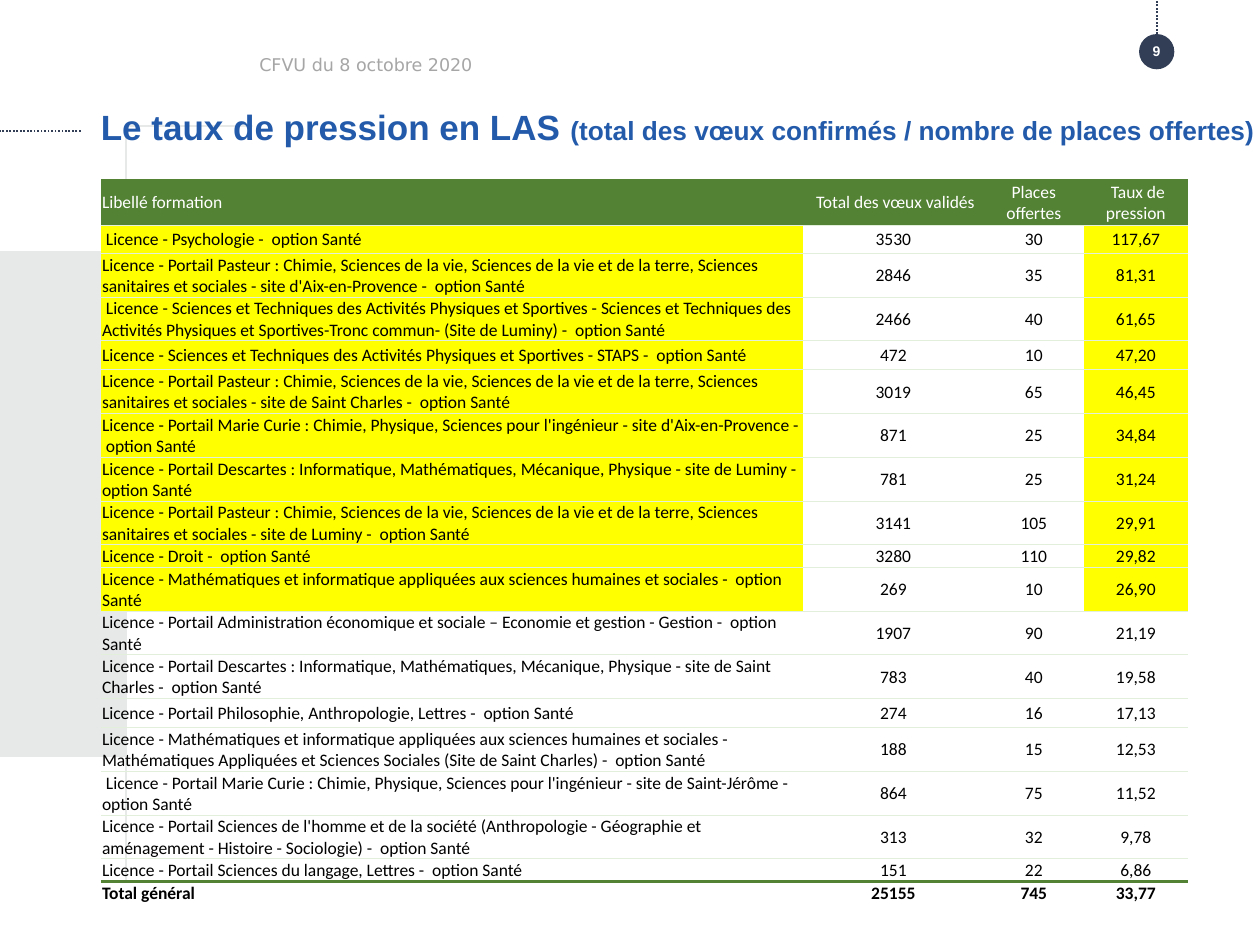
from lxml import etree
from pptx import Presentation
from pptx.dml.color import RGBColor
from pptx.enum.dml import MSO_LINE
from pptx.enum.shapes import MSO_CONNECTOR, MSO_SHAPE
from pptx.enum.text import MSO_ANCHOR, MSO_AUTO_SIZE, PP_ALIGN
from pptx.oxml.ns import qn
from pptx.util import Inches, Pt

COLORS = {
    "crescent": "E7E8E8", "navy": "313E56", "title": "235BAA", "muted": "A6A6A6",
    "green": "548235", "rule": "E2EFDA", "highlight": "FFFF00",
    "white": "FFFFFF", "black": "000000",
}
NO_STYLE_NO_GRID = "{2D5ABB26-0587-4C30-8999-92F81FD0307C}"

# Crescent outlines, in inches on the slide
CRESCENT_UPPER = [
    (1.65, 0.9), (1.64, 0.86), (1.55, 0.82), (1.47, 0.81), (1.36, 0.86), (1.27, 0.95),
    (1.2, 1.04), (1.12, 1.15), (1.04, 1.26), (0.95, 1.41), (0.82, 1.62), (0.69, 1.88),
    (0.57, 2.14), (0.46, 2.4), (0.39, 2.61), (0.32, 2.88), (0.27, 3.1), (0.22, 3.37),
    (0.2, 3.6), (0.18, 3.9), (0.18, 4.2), (0.19, 4.45), (0.22, 4.74), (0.26, 4.96),
    (0.32, 5.23), (0.39, 5.49), (0.48, 5.74), (0.57, 5.95), (0.69, 6.2), (0.83, 6.48),
    (0.83, 3.93), (0.85, 3.63), (0.87, 3.34), (0.91, 3.11), (0.95, 2.89), (1.03, 2.52),
    (1.11, 2.25), (1.19, 2.01), (1.28, 1.75), (1.37, 1.53), (1.46, 1.35), (1.55, 1.13),
    (1.61, 1), (1.64, 0.93),
]
CRESCENT_LOWER = [
    (1.65, 7.19), (1.61, 7.08), (1.55, 6.96), (1.47, 6.79), (1.4, 6.62), (1.33, 6.44),
    (1.26, 6.26), (1.19, 6.06), (1.1, 5.8), (1.02, 5.51), (0.95, 5.2), (0.9, 4.92),
    (0.87, 4.7), (0.84, 4.41), (0.83, 4.17), (0.83, 6.48), (0.9, 6.6), (0.99, 6.74),
    (1.07, 6.87), (1.14, 6.97), (1.22, 7.08), (1.29, 7.16), (1.36, 7.23), (1.43, 7.27),
    (1.51, 7.28), (1.55, 7.28), (1.62, 7.25), (1.65, 7.21),
]

HEADERS = ["Libellé formation", " Total des vœux validés", "Places offertes", " Taux de pression"]
OPTION = " -  option Santé"
PASTEUR = ("Licence - Portail Pasteur : Chimie, Sciences de la vie, Sciences de la vie "
           "et de la terre, Sciences sanitaires et sociales - site ")
STAPS = "Licence - Sciences et Techniques des Activités Physiques et Sportives - "
CURIE = "Licence - Portail Marie Curie : Chimie, Physique, Sciences pour l'ingénieur - site "
DESCARTES = "Licence - Portail Descartes : Informatique, Mathématiques, Mécanique, Physique - site "
MATHS = "Licence - Mathématiques et informatique appliquées aux sciences humaines et sociales"

# Label, confirmed wishes, places, pressure rate, row height
PROGRAMMES = [
    (" Licence - Psychologie", "3530", "30", "117,67", 0.22),
    (PASTEUR + "d'Aix-en-Provence", "2846", "35", "81,31", 0.34),
    (" " + STAPS + "Sciences et Techniques des Activités Physiques et Sportives"
     "-Tronc commun- (Site de Luminy)", "2466", "40", "61,65", 0.34),
    (STAPS + "STAPS", "472", "10", "47,20", 0.23),
    (PASTEUR + "de Saint Charles", "3019", "65", "46,45", 0.34),
    (CURIE + "d'Aix-en-Provence", "871", "25", "34,84", 0.34),
    (DESCARTES + "de Luminy", "781", "25", "31,24", 0.34),
    (PASTEUR + "de Luminy", "3141", "105", "29,91", 0.34),
    ("Licence - Droit", "3280", "110", "29,82", 0.17),
    (MATHS, "269", "10", "26,90", 0.34),
    ("Licence - Portail Administration économique et sociale – Economie et gestion - Gestion",
     "1907", "90", "21,19", 0.34),
    (DESCARTES + "de Saint Charles", "783", "40", "19,58", 0.34),
    ("Licence - Portail Philosophie, Anthropologie, Lettres", "274", "16", "17,13", 0.23),
    (MATHS + " - Mathématiques Appliquées et Sciences Sociales (Site de Saint Charles)",
     "188", "15", "12,53", 0.34),
    (" " + CURIE + "de Saint-Jérôme", "864", "75", "11,52", 0.34),
    ("Licence - Portail Sciences de l'homme et de la société (Anthropologie - Géographie et "
     "aménagement - Histoire - Sociologie)", "313", "32", "9,78", 0.34),
    ("Licence - Portail Sciences du langage, Lettres", "151", "22", "6,86", 0.17),
]
TOTAL = ("Total général", "25155", "745", "33,77")
HIGHLIGHTED_ROWS = 10


def rgb(name):
    return RGBColor.from_string(COLORS[name])


def add_run(paragraph, text, size, font, color, bold=False):
    run = paragraph.add_run()
    run.text = text
    run.font.size, run.font.name, run.font.bold = Pt(size), font, bold
    run.font.color.rgb = rgb(color)


def add_label(slide, box, text, size, font, color, bold=False, align=PP_ALIGN.LEFT):
    frame = slide.shapes.add_textbox(*map(Inches, box)).text_frame
    frame.word_wrap = True
    frame.vertical_anchor = MSO_ANCHOR.MIDDLE
    frame.paragraphs[0].alignment = align
    add_run(frame.paragraphs[0], text, size, font, color, bold)


def add_crescent(slide):
    for outline in (CRESCENT_UPPER, CRESCENT_LOWER):
        builder = slide.shapes.build_freeform(*outline[0], scale=Inches(1))
        builder.add_line_segments(outline[1:], close=True)
        shape = builder.convert_to_shape()
        shape.shadow.inherit = False
        shape.fill.solid()
        shape.fill.fore_color.rgb = rgb("crescent")
        shape.line.color.rgb = rgb("crescent")
        shape.line.width = Pt(0.75)


def add_dotted_line(slide, start, end):
    line = slide.shapes.add_connector(MSO_CONNECTOR.STRAIGHT, *map(Inches, start + end))
    line.line.color.rgb = rgb("navy")
    line.line.width = Pt(1)
    line.line.dash_style = MSO_LINE.ROUND_DOT
    etree.SubElement(line._element.spPr, qn("a:effectLst"))


def add_page_badge(slide, left, top, size):
    badge = slide.shapes.add_shape(MSO_SHAPE.OVAL, *map(Inches, (left, top, size, size)))
    badge.shadow.inherit = False
    badge.fill.solid()
    badge.fill.fore_color.rgb = rgb("navy")
    badge.line.fill.background()
    center = left + size / 2
    add_dotted_line(slide, (center, top), (center, 0))
    add_label(slide, (center - 0.25, 0.33, 0.5, 0.15), "9", 8, "Arial", "white", True,
              PP_ALIGN.CENTER)


def place_title(slide, box):
    title = slide.shapes.title
    slide.shapes._spTree.append(title._element)  # bring in front of the crescent
    title.left, title.top, title.width, title.height = map(Inches, box)
    frame = title.text_frame
    frame.margin_left = frame.margin_right = frame.margin_top = frame.margin_bottom = 0
    frame.word_wrap = True
    frame.auto_size = MSO_AUTO_SIZE.NONE
    frame.vertical_anchor = MSO_ANCHOR.MIDDLE
    paragraph = frame.paragraphs[0]
    paragraph.alignment = PP_ALIGN.LEFT
    add_run(paragraph, "Le taux de pression en LAS ", 20, "Arial", "title", True)
    add_run(paragraph, "(total des vœux confirmés / nombre de places offertes)",
            15, "Arial", "title", True)


def set_borders(cell, top, bottom):
    """Draw the horizontal cell borders, each a (color, width) pair or None."""
    properties = cell._tc.get_or_add_tcPr()
    for index, (tag, border) in enumerate((("a:lnT", top), ("a:lnB", bottom))):
        line = etree.Element(qn(tag))
        if border:
            line.set("w", str(Pt(border[1])))
            fill = etree.SubElement(line, qn("a:solidFill"))
            etree.SubElement(fill, qn("a:srgbClr"), val=COLORS[border[0]])
        else:
            etree.SubElement(line, qn("a:noFill"))
        properties.insert(index, line)


def fill_row(table, row, texts, fills, top, bottom, color="black", bold=False):
    for column, (text, fill) in enumerate(zip(texts, fills)):
        cell = table.cell(row, column)
        cell.margin_left = cell.margin_right = cell.margin_top = Inches(0.01)
        cell.margin_bottom = 0
        cell.vertical_anchor = MSO_ANCHOR.MIDDLE
        if fill:
            cell.fill.solid()
            cell.fill.fore_color.rgb = rgb(fill)
        else:
            cell.fill.background()
        set_borders(cell, top, bottom)
        paragraph = cell.text_frame.paragraphs[0]
        paragraph.alignment = PP_ALIGN.CENTER if column else PP_ALIGN.LEFT
        add_run(paragraph, text, 10, "Calibri", color, bold)


def add_pressure_table(slide, left, top):
    widths = [5.57, 1.44, 0.79, 0.83]
    heights = [0.37] + [programme[-1] for programme in PROGRAMMES] + [0.17]
    box = (left, top, sum(widths), sum(heights))
    table = slide.shapes.add_table(len(heights), len(widths), *map(Inches, box)).table
    table._tbl.tblPr.find(qn("a:tableStyleId")).text = NO_STYLE_NO_GRID
    for column, width in zip(table.columns, widths):
        column.width = Inches(width)
    for row, height in zip(table.rows, heights):
        row.height = Inches(height)

    thin, thick = ("rule", 0.5), ("green", 2)
    plain = [None] * 4
    fill_row(table, 0, HEADERS, ["green"] * 4, None, thin, "white")
    for row, (label, *values, _) in enumerate(PROGRAMMES, 1):
        fills = ["highlight", "white", "white", "highlight"] if row <= HIGHLIGHTED_ROWS else plain
        bottom = thick if row == len(PROGRAMMES) else thin
        fill_row(table, row, [label + OPTION, *values], fills, thin, bottom)
    fill_row(table, len(heights) - 1, TOTAL, plain, thick, None, bold=True)


def main():
    presentation = Presentation()
    presentation.slide_width, presentation.slide_height = Inches(10), Inches(7.5)
    slide = presentation.slides.add_slide(presentation.slide_layouts[5])
    # Background decoration
    add_crescent(slide)
    add_page_badge(slide, 9.04, 0.27, 0.28)
    add_dotted_line(slide, (0.64, 1.04), (0, 1.04))
    # Content
    place_title(slide, (0.8, 0.81, 9.5, 0.39))
    add_pressure_table(slide, 0.8, 1.42)
    add_label(slide, (1.96, 0.29, 6.62, 0.44), "CFVU du 8 octobre 2020", 10, "DejaVu Sans", "muted")
    presentation.save("out.pptx")


if __name__ == "__main__":
    main()
